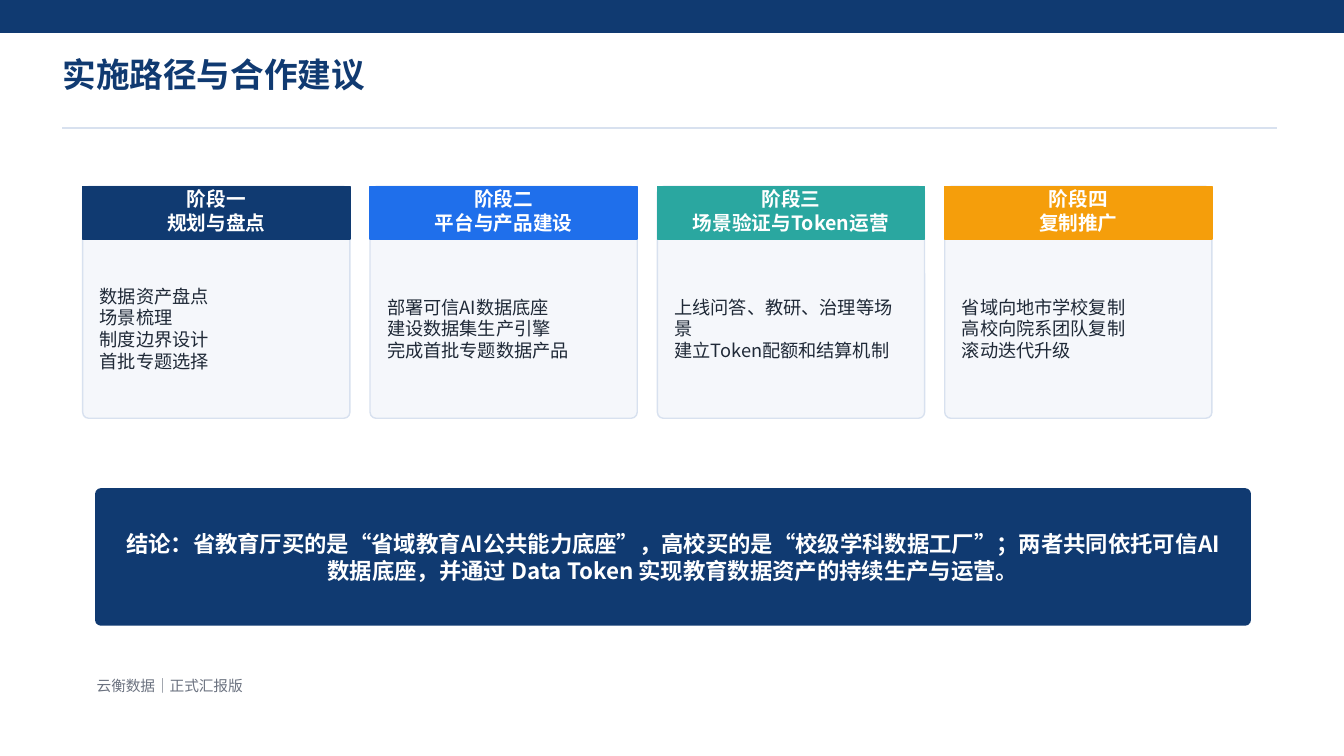
import pptx
import pptx.dml.color
import pptx.enum.shapes
import pptx.enum.text
import pptx.oxml.ns
import pptx.util
from lxml import etree
from pptx.util import Inches

FONT = "Noto Sans CJK SC"
NAVY, WHITE, PALE, BORDER = "103A71", "FFFFFF", "F5F7FB", "D8E1EF"
INK, GRAY = "1F2937", "6B7280"
SHAPE = pptx.enum.shapes.MSO_SHAPE
ALIGN = pptx.enum.text.PP_ALIGN

STAGES = [
    ("阶段一", "规划与盘点", NAVY,
     ["数据资产盘点", "场景梳理", "制度边界设计", "首批专题选择"]),
    ("阶段二", "平台与产品建设", "1F6FEB",
     ["部署可信AI数据底座", "建设数据集生产引擎", "完成首批专题数据产品"]),
    ("阶段三", "场景验证与Token运营", "2AA7A0",
     ["上线问答、教研、治理等场景", "建立Token配额和结算机制"]),
    ("阶段四", "复制推广", "F59E0B",
     ["省域向地市学校复制", "高校向院系团队复制", "滚动迭代升级"]),
]
CONCLUSION = (
    "结论：省教育厅买的是“省域教育AI公共能力底座”，高校买的是“校级学科数据工厂”；"
    "两者共同依托可信AI数据底座，并通过 Data Token 实现教育数据资产的持续生产与运营。"
)


def color(value):
    return pptx.dml.color.RGBColor.from_string(value)


def add_panel(page, left, top, width, height, fill, line=None, radius=None):
    """Add a filled rectangle, rounded when a radius in inches is given."""
    kind = SHAPE.ROUNDED_RECTANGLE if radius else SHAPE.RECTANGLE
    panel = page.shapes.add_shape(
        kind, Inches(left), Inches(top), Inches(width), Inches(height))
    if radius:
        panel.adjustments[0] = radius / min(width, height)
    panel.shadow.inherit = False
    panel.fill.solid()
    panel.fill.fore_color.rgb = color(fill)
    panel.line.color.rgb = color(line or fill)
    panel.line.width = pptx.util.Pt(1)


def add_text(page, left, top, width, height, lines, *, size, ink,
             bold=False, align=ALIGN.LEFT):
    """Add a text box without margins, one paragraph per line."""
    box = page.shapes.add_textbox(
        Inches(left), Inches(top), Inches(width), Inches(height))
    frame = box.text_frame
    frame.word_wrap = True
    frame.vertical_anchor = pptx.enum.text.MSO_ANCHOR.MIDDLE
    frame.margin_left = frame.margin_right = 0
    frame.margin_top = frame.margin_bottom = 0
    for index, line in enumerate(lines):
        para = frame.add_paragraph() if index else frame.paragraphs[0]
        para.alignment = align
        span = para.add_run()
        span.text = line
        span.font.size = pptx.util.Pt(size)
        span.font.bold = bold
        span.font.color.rgb = color(ink)
        span.font.name = FONT
        etree.SubElement(span.font._element, pptx.oxml.ns.qn("a:ea"), typeface=FONT)


def add_header(page, width):
    add_panel(page, 0, 0, width, 0.32, NAVY)
    add_text(page, 0.62, 0.52, 8.9, 0.42, ["实施路径与合作建议"],
             size=24, ink=NAVY, bold=True)
    rule = page.shapes.add_connector(
        pptx.enum.shapes.MSO_CONNECTOR.STRAIGHT,
        Inches(0.62), Inches(1.27), Inches(12.67), Inches(1.27))
    rule.line.color.rgb = color(BORDER)
    rule.line.width = pptx.util.Pt(1)
    etree.SubElement(rule._element.spPr, pptx.oxml.ns.qn("a:effectLst"))


def add_stage(page, left, top, width, height, stage):
    name, theme, accent, tasks = stage
    add_panel(page, left, top, width, height, PALE, line=BORDER, radius=0.06)
    add_panel(page, left, top, width, 0.52, accent)
    add_text(page, left + 0.15, top + 0.1, width - 0.3, 0.28, [name, theme],
             size=14, ink=WHITE, bold=True, align=ALIGN.CENTER)
    add_text(page, left + 0.17, top + 0.65, width - 0.34, height - 0.78, tasks,
             size=13, ink=INK)


def add_conclusion(page, left, top, width, height):
    add_panel(page, left, top, width, height, NAVY, radius=0.05)
    add_text(page, left + 0.3, top + 0.33, width - 0.6, height - 0.65, [CONCLUSION],
             size=16, ink=WHITE, bold=True, align=ALIGN.CENTER)


def add_footer(page, left, top, width, height):
    add_text(page, left, top, width, height, ["云衡数据｜正式汇报版"],
             size=10.5, ink=GRAY)


def main():
    deck = pptx.Presentation()
    deck.slide_width, deck.slide_height = Inches(13.33), Inches(7.5)
    page = deck.slides.add_slide(deck.slide_layouts[6])
    page.background.fill.solid()
    page.background.fill.fore_color.rgb = color(WHITE)
    add_header(page, 13.33)
    stage_width, gap = 2.65, 0.2
    for index, stage in enumerate(STAGES):
        left = 0.82 + index * (stage_width + gap)
        add_stage(page, left, 1.85, stage_width, 2.3, stage)
    add_conclusion(page, 0.95, 4.85, 11.45, 1.35)
    add_footer(page, 0.96, 6.7, 2.2, 0.2)
    deck.save("out.pptx")


if __name__ == "__main__":
    main()
